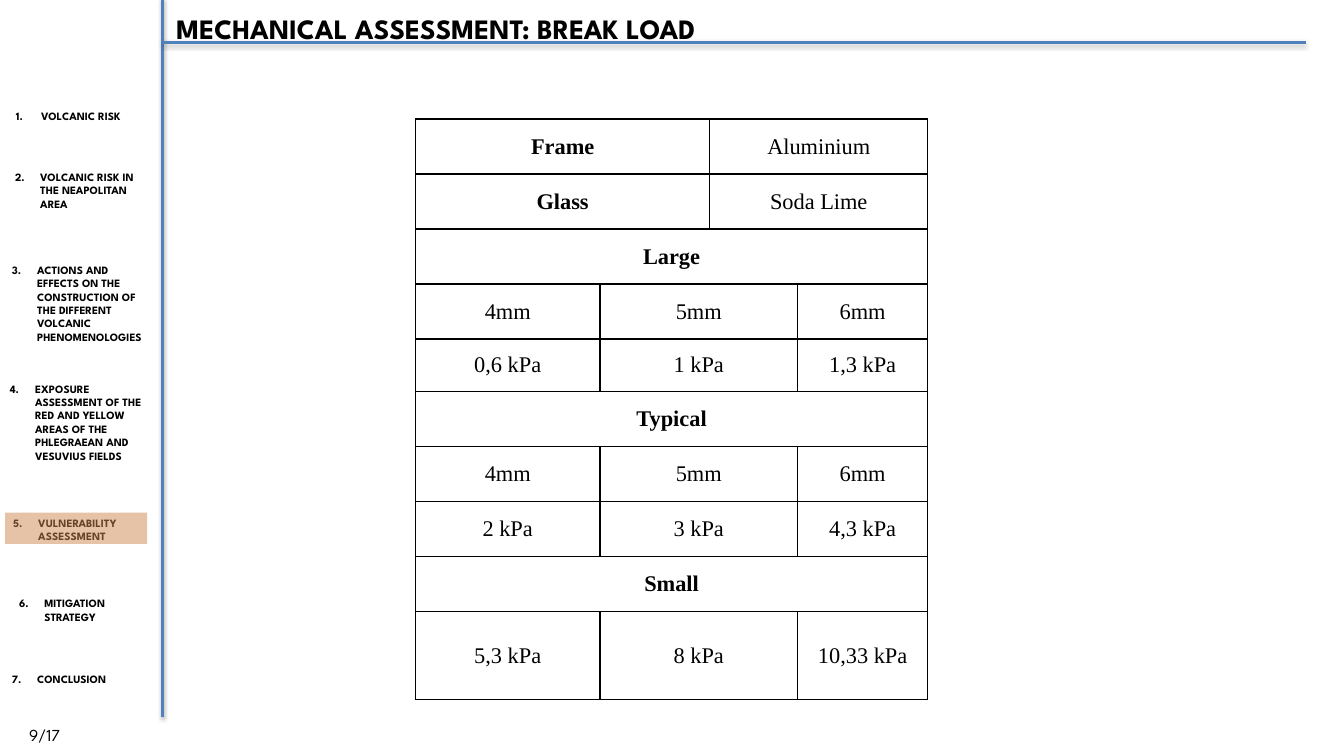
from lxml import etree
from pptx import Presentation
from pptx.dml.color import RGBColor
from pptx.enum.shapes import MSO_CONNECTOR, MSO_SHAPE
from pptx.enum.text import MSO_ANCHOR, PP_ALIGN
from pptx.oxml import parse_xml
from pptx.oxml.ns import nsdecls, qn
from pptx.util import Inches, Pt

STRAIGHT = MSO_CONNECTOR.STRAIGHT
RECTANGLE = MSO_SHAPE.RECTANGLE
TOP, MIDDLE = MSO_ANCHOR.TOP, MSO_ANCHOR.MIDDLE
CENTER = PP_ALIGN.CENTER

COLORS = {"text": "000000", "rule": "4F81BD", "highlight": "CE8950", "border": "000000"}
HEADING_FONT, TABLE_FONT = "League Spartan", "Times New Roman"

prs = Presentation()
prs.slide_width, prs.slide_height = Inches(13.33), Inches(7.5)
slide = prs.slides.add_slide(prs.slide_layouts[6])


def area(left, top, width, height):
    """Turn percentages of the slide's width and height into lengths."""
    across, down = prs.slide_width / 100, prs.slide_height / 100
    return [round(n) for n in (left * across, top * down, width * across, height * down)]


def write(frame, text, size, bold, font_name=HEADING_FONT, number=None, hanging=False):
    """Fill a text frame with one paragraph, optionally numbered or hanging."""
    frame.word_wrap = True
    paragraph = frame.paragraphs[0]
    paragraph.text = text
    if hanging:
        properties = paragraph._p.get_or_add_pPr()
        properties.set("marL", str(Inches(0.25)))
        properties.set("indent", str(-Inches(0.25)))
        if number:
            bullet_font = etree.SubElement(properties, qn("a:buFont"))
            bullet_font.set("typeface", "+mj-lt")
            bullet = etree.SubElement(properties, qn("a:buAutoNum"))
            bullet.set("type", "arabicPeriod")
            bullet.set("startAt", str(number))
    font = paragraph.runs[0].font
    look = {"size": Pt(size), "bold": bold, "name": font_name}
    for attribute, value in look.items():
        setattr(font, attribute, value)
    font.color.rgb = RGBColor.from_string(COLORS["text"])
    return paragraph


# Frame rules
RULES = [(12.08, -0.27, 12.08, 94.8), (12.08, 5.6, 97.15, 5.6)]
for ends in RULES:
    rule = slide.shapes.add_connector(STRAIGHT, *area(*ends))
    rule.line.color.rgb = RGBColor.from_string(COLORS["rule"])
    rule.line.width = Pt(2)
    rule._element.spPr.append(parse_xml(
        f'<a:effectLst {nsdecls("a")}><a:outerShdw blurRad="{Pt(3.1)}" dist="{Pt(1.6)}" '
        'dir="5400000" rotWithShape="0"><a:srgbClr val="000000"><a:alpha val="38000"/>'
        '</a:srgbClr></a:outerShdw></a:effectLst>'))

# Chapter list
CHAPTERS = [
    ("VOLCANIC RISK", 0.45, 13.87, 9.68, 3.2),
    ("VOLCANIC RISK IN THE NEAPOLITAN AREA", 0.38, 21.87, 11.63, 6.67),
    ("ACTIONS AND EFFECTS ON THE CONSTRUCTION OF THE DIFFERENT VOLCANIC PHENOMENOLOGIES",
     0.15, 34.13, 11.55, 12.13),
    ("EXPOSURE ASSESSMENT OF THE RED AND YELLOW AREAS OF THE PHLEGRAEAN AND VESUVIUS FIELDS",
     0, 49.87, 12.08, 12.13),
    ("VULNERABILITY ASSESSMENT", 0.23, 67.6, 11.93, 4.93),
    ("MITIGATION STRATEGY", 0.68, 78.27, 11.55, 4.53),
    ("CONCLUSION", 0.15, 88.27, 11.55, 3.2),
]
for number, (chapter, *place) in enumerate(CHAPTERS, start=1):
    entry = slide.shapes.add_textbox(*area(*place))
    write(entry.text_frame, chapter, 8, True, number=number, hanging=True)

# Break load table
BREAK_LOADS = [
    ["Frame", "Aluminium"],
    ["Glass", "Soda Lime"],
    ["Large"],
    ["4mm", "5mm", "6mm"],
    ["0,6 kPa", "1 kPa", "1,3 kPa"],
    ["Typical"],
    ["4mm", "5mm", "6mm"],
    ["2 kPa", "3 kPa", "4,3 kPa"],
    ["Small"],
    ["5,3 kPa", "8 kPa", "10,33 kPa"],
]
SPANS = {1: [(0, 3)], 2: [(0, 1), (2, 3)], 3: [(0, 0), (1, 2), (3, 3)]}
COLUMN_SHARES = [13.73, 8.18, 6.53, 9.68]
ROW_SHARES = [7.28] * 4 + [7] + [7.28] * 4 + [11.64]
CELL_FORMAT = {"vertical_anchor": MIDDLE, "margin_left": Inches(0.07),
               "margin_right": Inches(0.07), "margin_top": 0, "margin_bottom": 0}

table = slide.shapes.add_table(
    len(ROW_SHARES), len(COLUMN_SHARES),
    *area(30.91, 15.73, sum(COLUMN_SHARES), sum(ROW_SHARES))).table
table.first_row = table.horz_banding = False
for column, share in zip(table.columns, COLUMN_SHARES):
    column.width = area(0, 0, share, 0)[2]
for row, share in zip(table.rows, ROW_SHARES):
    row.height = area(0, 0, 0, share)[3]

for cell in table.iter_cells():
    for attribute, value in CELL_FORMAT.items():
        setattr(cell, attribute, value)
    cell.fill.background()
    for position, side in enumerate("LRTB"):
        cell._tc.get_or_add_tcPr().insert(position, parse_xml(
            f'<a:ln{side} {nsdecls("a")} w="{Pt(1)}"><a:solidFill>'
            f'<a:srgbClr val="{COLORS["border"]}"/></a:solidFill></a:ln{side}>'))

for row_index, values in enumerate(BREAK_LOADS):
    for value, (first, last) in zip(values, SPANS[len(values)]):
        cell = table.cell(row_index, first)
        if last > first:
            cell.merge(table.cell(row_index, last))
        is_heading = len(values) < 3 and first == 0
        write(cell.text_frame, value, 16, is_heading, TABLE_FONT).alignment = CENTER

# Current chapter highlight
highlight = slide.shapes.add_shape(RECTANGLE, *area(0.38, 67.8, 10.58, 4.13))
highlight.shadow.inherit = False
highlight.line.fill.background()
highlight.fill.solid()
highlight.fill.fore_color.rgb = RGBColor.from_string(COLORS["highlight"])
highlight_color = highlight._element.spPr.find(".//" + qn("a:srgbClr"))
etree.SubElement(highlight_color, qn("a:alpha")).set("val", "50000")

# Title and page number
title = slide.shapes.add_textbox(*area(12.38, 0.93, 83.42, 5.87))
write(title.text_frame, "MECHANICAL ASSESSMENT: BREAK LOAD", 20, True, hanging=True)
page_number = slide.shapes.add_textbox(*area(1.43, 96, 8.78, 2.4))
write(page_number.text_frame, "9/17", 12, False)
for heading, anchor in ((title, TOP), (page_number, MIDDLE)):
    heading.text_frame.vertical_anchor = anchor

prs.save("out.pptx")
